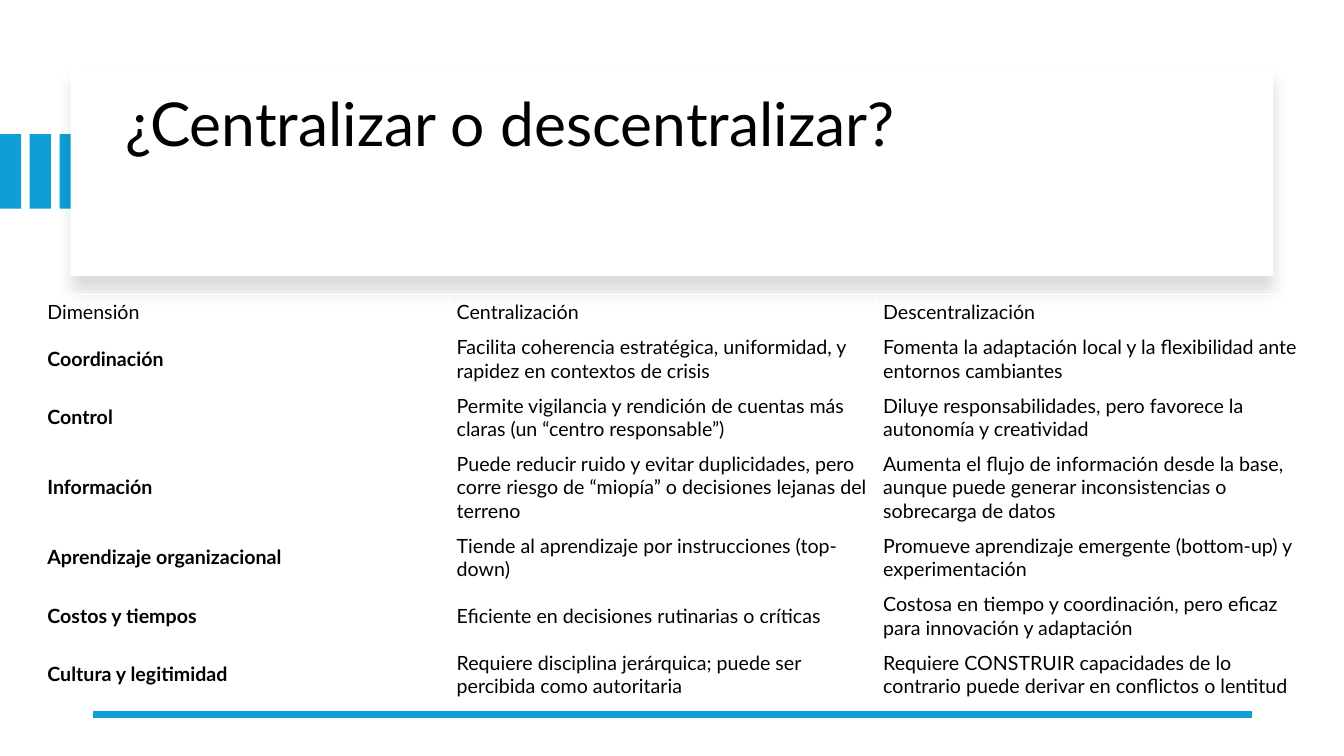
"""Build the slide comparing centralization and decentralization."""
from dataclasses import dataclass

from lxml import etree
from pptx import Presentation, util as u
from pptx.dml.color import RGBColor
from pptx.enum import shapes, text
from pptx.oxml.ns import qn

FONT, BLACK, WHITE, BLUE = "Lato", "000000", "FFFFFF", "0F9ED5"
MIDDLE = text.MSO_ANCHOR.MIDDLE
COLS = (4.06, 4.23, 4.33)
LINE_HEIGHT, ROW_PADDING = 0.233, 0.115


@dataclass
class Box:
    left: float
    top: float
    width: float
    height: float

    def lengths(self) -> list:
        return [u.Inches(n) for n in (self.left, self.top, self.width, self.height)]


@dataclass
class Row:
    dimension: str
    central: str
    decentral: str
    lines: int = 2


ROWS = [
    Row("Dimensión", "Centralización", "Descentralización", 1),
    Row("Coordinación",
        "Facilita coherencia estratégica, uniformidad, y rapidez en contextos de crisis",
        "Fomenta la adaptación local y la flexibilidad ante entornos cambiantes"),
    Row("Control",
        "Permite vigilancia y rendición de cuentas más claras (un “centro responsable”)",
        "Diluye responsabilidades, pero favorece la autonomía y creatividad"),
    Row("Información",
        "Puede reducir ruido y evitar duplicidades, pero corre riesgo de “miopía” o decisiones lejanas del terreno",
        "Aumenta el flujo de información desde la base, aunque puede generar inconsistencias o sobrecarga de datos", 3),
    Row("Aprendizaje organizacional",
        "Tiende al aprendizaje por instrucciones (top-down)",
        "Promueve aprendizaje emergente (bottom-up) y experimentación"),
    Row("Costos y tiempos",
        "Eficiente en decisiones rutinarias o críticas",
        "Costosa en tiempo y coordinación, pero eficaz para innovación y adaptación"),
    Row("Cultura y legitimidad",
        "Requiere disciplina jerárquica; puede ser percibida como autoritaria",
        "Requiere CONSTRUIR capacidades de lo contrario puede derivar en conflictos o lentitud"),
]


def color(value: str) -> RGBColor:
    return RGBColor.from_string(value)


def set_attrs(obj, values: dict) -> None:
    for name, value in values.items():
        setattr(obj, name, value)


def write(p, content: str, size: float, bold: bool = False) -> None:
    r = p.add_run()
    r.text = content
    set_attrs(r.font, {"name": FONT, "size": u.Pt(size), "bold": bold})
    r.font.color.rgb = color(BLACK)


def add_rect(parent, box: Box, fill: str):
    sp = parent.add_shape(shapes.MSO_SHAPE.RECTANGLE, *box.lengths())
    sp.shadow.inherit = False
    sp.fill.solid()
    sp.fill.fore_color.rgb = color(fill)
    sp.line.fill.background()
    return sp


def add_shadow(sp) -> None:
    effects = sp.element.spPr.find(qn("a:effectLst"))
    shadow = etree.SubElement(effects, qn("a:outerShdw"), blurRad=str(u.Pt(11)),
                              dist=str(u.Pt(10)), dir="5400000", algn="t", rotWithShape="0")
    clr = etree.SubElement(shadow, qn("a:srgbClr"), val=BLACK)
    etree.SubElement(clr, qn("a:alpha"), val="15000")


def add_title(s, panel) -> None:
    title = s.shapes.title
    panel.element.addnext(title.element)
    box = Box(1.14, 0.89, 11.13, 0.74)
    set_attrs(title, dict(zip(("left", "top", "width", "height"), box.lengths())))
    tf = title.text_frame
    set_attrs(tf, {"word_wrap": True, "auto_size": text.MSO_AUTO_SIZE.NONE,
                   "vertical_anchor": MIDDLE})
    p = tf.paragraphs[0]
    set_attrs(p, {"alignment": text.PP_ALIGN.LEFT, "line_spacing": 0.9})
    write(p, "¿Centralizar o descentralizar?", 43.2)


def add_rule(s) -> None:
    line = s.shapes.add_connector(shapes.MSO_CONNECTOR.STRAIGHT, u.Inches(12.42),
                                  u.Inches(7.09), u.Inches(0.92), u.Inches(7.09))
    line.line.color.rgb = color(BLUE)
    line.line.width = u.Pt(4.5)
    etree.SubElement(line.element.spPr, qn("a:effectLst"))


def add_comparison(s) -> None:
    box = Box(0.4, 2.92, sum(COLS), 4.07)
    table = s.shapes.add_table(len(ROWS), len(COLS), *box.lengths()).table
    set_attrs(table, {"first_row": False, "horz_banding": False})
    for column, width in zip(table.columns, COLS):
        column.width = u.Inches(width)
    margins = {"margin_left": u.Inches(0.07), "margin_right": u.Inches(0.07),
               "margin_top": u.Inches(0.03), "margin_bottom": u.Inches(0.03)}
    for i, row in enumerate(ROWS):
        table.rows[i].height = u.Inches(round(row.lines * LINE_HEIGHT + ROW_PADDING, 2))
        for j, content in enumerate((row.dimension, row.central, row.decentral)):
            cell = table.cell(i, j)
            set_attrs(cell, {**margins, "vertical_anchor": MIDDLE})
            cell.fill.background()
            write(cell.text_frame.paragraphs[0], content, 14, i > 0 and j == 0)


def main() -> None:
    prs = Presentation()
    set_attrs(prs, {"slide_width": u.Inches(13.33), "slide_height": u.Inches(7.5)})
    s = prs.slides.add_slide(prs.slide_layouts[5])
    s.background.fill.solid()
    s.background.fill.fore_color.rgb = color(WHITE)
    bars = s.shapes.add_group_shape()
    for i in range(3):
        add_rect(bars.shapes, Box(i * 0.295, 1.33, 0.21, 0.74), BLUE)
    panel = add_rect(s.shapes, Box(0.7, 0.67, 11.93, 2.07), WHITE)
    add_shadow(panel)
    add_title(s, panel)
    add_rule(s)
    add_comparison(s)
    prs.save("out.pptx")


if __name__ == "__main__":
    main()
